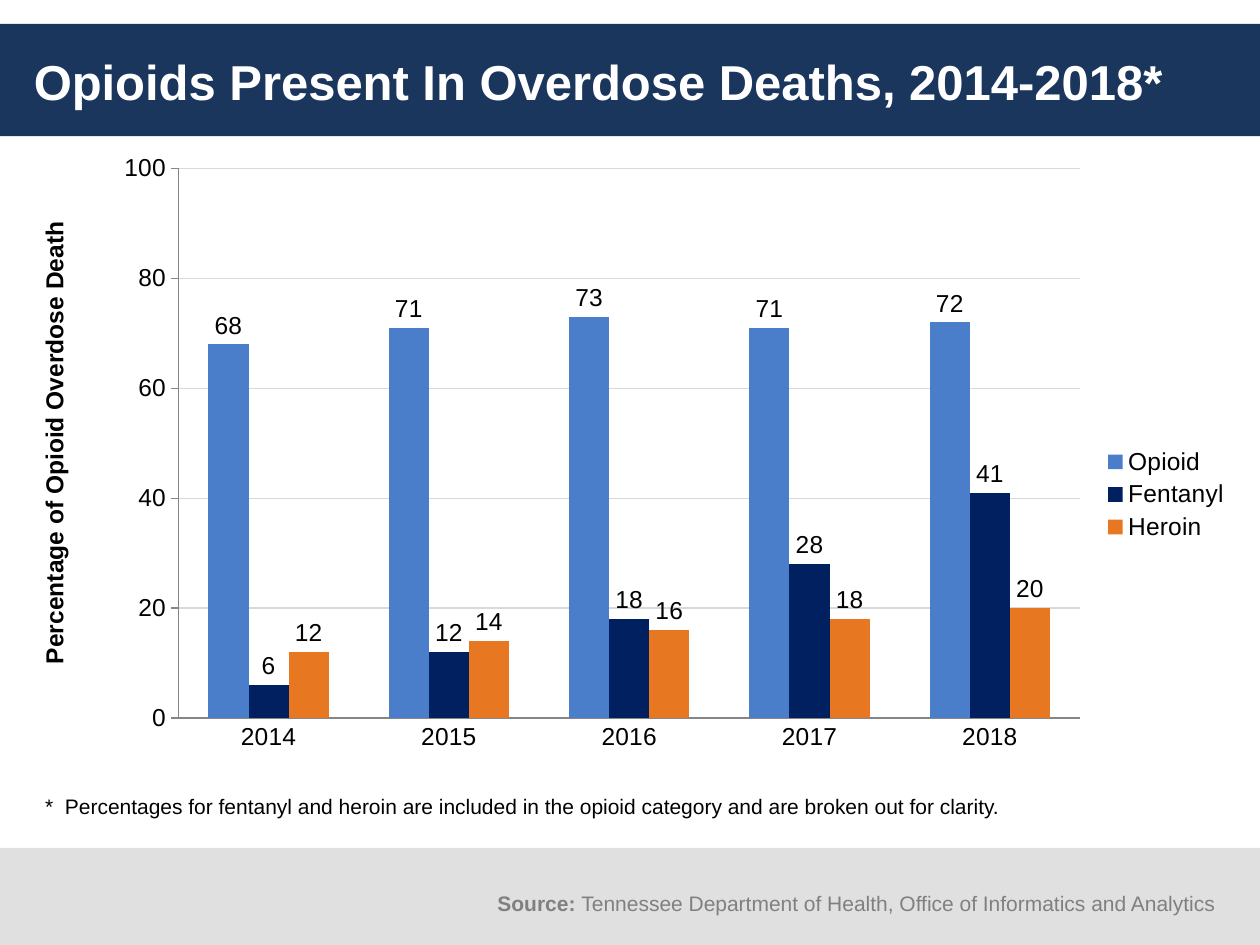
from lxml.etree import SubElement
from pptx import Presentation
from pptx.chart.data import CategoryChartData
from pptx.dml.color import RGBColor
from pptx.enum.chart import XL_CHART_TYPE, XL_LABEL_POSITION, XL_LEGEND_POSITION, XL_TICK_MARK
from pptx.enum.shapes import MSO_SHAPE
from pptx.enum.text import MSO_ANCHOR, PP_ALIGN
from pptx.oxml.ns import qn
from pptx.util import Inches, Pt

WIDE, HIGH = 10, 7.5
FONT = "Arial"
BANDS = [((0, 0.19, WIDE, 0.89), "1B365D"), ((0, 6.73, WIDE, 0.77), "E0E0E0")]
TITLE = [("Opioids Present In Overdose Deaths, 2014-2018*", True)]
NOTE = [("*  Percentages for fentanyl and heroin are included in the opioid "
         "category and are broken out for clarity.", False)]
AXIS = [("Percentage of Opioid Overdose Death", True)]
SOURCE = [("Source: ", True),
          ("Tennessee Department of Health, Office of Informatics and Analytics", False)]
YEARS = ["2014", "2015", "2016", "2017", "2018"]
SERIES = [
    ("Opioid", "4A7ECA", (68, 71, 73, 71, 72)),
    ("Fentanyl", "002060", (6, 12, 18, 28, 41)),
    ("Heroin", "E87722", (12, 14, 16, 18, 20)),
]
PLOT = {"x": 0.134, "y": 0.032, "w": 0.734, "h": 0.789}


def paint(color, tint):
    color.rgb = RGBColor.from_string(tint)


def style(font, size, tint="000000", bold=False):
    font.name, font.size, font.bold = FONT, Pt(size), bold
    paint(font.color, tint)


def place(box):
    return [Inches(n) for n in box]


def band(slide, box, tint):
    shape = slide.shapes.add_shape(MSO_SHAPE.RECTANGLE, *place(box))
    shape.shadow.inherit = False
    shape.fill.solid()
    paint(shape.fill.fore_color, tint)
    shape.line.fill.background()


def write(slide, box, runs, size, tint="000000", align=PP_ALIGN.LEFT,
          anchor=MSO_ANCHOR.TOP, turn=None):
    frame = slide.shapes.add_textbox(*place(box)).text_frame
    frame.word_wrap = True
    frame.vertical_anchor = anchor
    if turn:
        frame._txBody.bodyPr.set("vert", turn)
    para = frame.paragraphs[0]
    para.alignment = align
    for text, bold in runs:
        run = para.add_run()
        run.text = text
        style(run.font, size, tint, bold)


def fix_plot(chart):
    area = chart._chartSpace.chart.plotArea
    for old in area.findall(qn("c:layout")):
        area.remove(old)
    layout = SubElement(area, qn("c:layout"))
    area.insert(0, layout)
    manual = SubElement(layout, qn("c:manualLayout"))
    rules = {"layoutTarget": "inner", "xMode": "edge", "yMode": "edge", **PLOT}
    for name, value in rules.items():
        SubElement(manual, qn("c:" + name)).set("val", str(value))


def draw_chart(slide, box):
    data = CategoryChartData(number_format="#,##0")
    data.categories = YEARS
    for name, _, values in SERIES:
        data.add_series(name, values)
    chart = slide.shapes.add_chart(XL_CHART_TYPE.COLUMN_CLUSTERED, *place(box), data).chart
    style(chart.font, 14)
    chart.has_title = False
    chart.has_legend = True
    chart.legend.position = XL_LEGEND_POSITION.RIGHT
    chart.legend.include_in_layout = False
    style(chart.legend.font, 14)

    years, scale = chart.category_axis, chart.value_axis
    years.major_tick_mark = XL_TICK_MARK.NONE
    scale.major_tick_mark = XL_TICK_MARK.OUTSIDE
    scale.minimum_scale, scale.maximum_scale, scale.major_unit = 0, 100, 20
    scale.tick_labels.number_format = "#,##0"
    scale.tick_labels.number_format_is_linked = False
    grid = scale.major_gridlines.format.line
    paint(grid.color, "D9D9D9")
    grid.width = Pt(0.75)
    for axis in (years, scale):
        style(axis.tick_labels.font, 14)
        paint(axis.format.line.color, "868686")
        axis.format.line.width = Pt(0.75)

    plot = chart.plots[0]
    plot.gap_width, plot.overlap, plot.vary_by_categories = 150, 0, False
    for bars, (_, tint, _) in zip(plot.series, SERIES):
        bars.invert_if_negative = False
        bars.format.fill.solid()
        paint(bars.format.fill.fore_color, tint)
        labels = bars.data_labels
        labels.show_value = True
        labels.position = XL_LABEL_POSITION.OUTSIDE_END
        labels.number_format, labels.number_format_is_linked = "#,##0", False
        style(labels.font, 14)
    fix_plot(chart)


def main():
    """Build the overdose deaths slide."""
    deck = Presentation()
    deck.slide_width, deck.slide_height = Inches(WIDE), Inches(HIGH)
    slide = deck.slides.add_slide(deck.slide_layouts[6])
    for box, tint in BANDS:
        band(slide, box, tint)
    write(slide, (0.17, 0.19, 9.67, 0.9), TITLE, 28, "FFFFFF", anchor=MSO_ANCHOR.MIDDLE)
    draw_chart(slide, (0.11, 1.16, 9.75, 5.53))
    write(slide, (0.26, 6.25, 8.08, 0.3), NOTE, 12)
    write(slide, (0.26, 1.33, 0.44, 4.37), AXIS, 14, align=PP_ALIGN.CENTER, turn="vert270")
    write(slide, (3.75, 7.02, 6, 0.3), SOURCE, 12, "808080", PP_ALIGN.RIGHT)
    deck.save("out.pptx")


if __name__ == "__main__":
    main()
